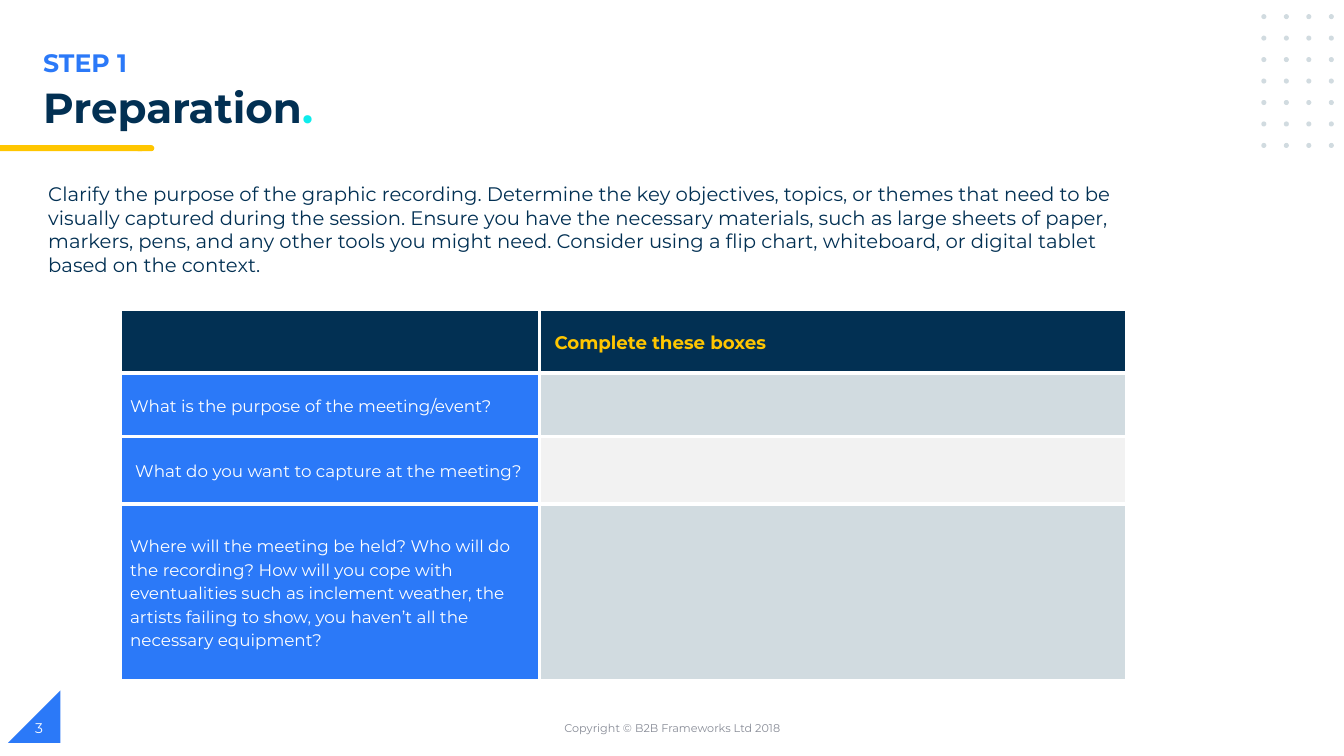
from dataclasses import dataclass

from lxml import etree
from pptx import Presentation
from pptx import util as u
from pptx.dml.color import RGBColor
from pptx.enum import shapes, text
from pptx.oxml import ns


@dataclass(frozen=True)
class Theme:
    font: str = "Montserrat"
    navy: str = "023053"
    blue: str = "2B79F8"
    yellow: str = "FFC600"
    cyan: str = "0EECEC"
    mist: str = "D1DBE0"
    pale: str = "F2F2F2"
    gray: str = "888C97"
    white: str = "FFFFFF"
    title: int = 30
    step: int = 18
    body: int = 14
    header: int = 13
    question: int = 12
    page: int = 10
    footer: int = 8


theme = Theme()
presentation = Presentation()
presentation.slide_width = u.Inches(13.33)
presentation.slide_height = u.Inches(7.5)
slide = presentation.slides.add_slide(presentation.slide_layouts[6])


def add_plain_shape(kind, left, top, width, height, color):
    shape = slide.shapes.add_shape(
        kind, u.Inches(left), u.Inches(top), u.Inches(width), u.Inches(height))
    shape.shadow.inherit = False
    shape.fill.solid()
    shape.fill.fore_color.rgb = RGBColor.from_string(color)
    shape.line.fill.background()
    return shape


def add_run(paragraph, words, size, color, bold=False):
    run = paragraph.add_run()
    run.text = words
    run.font.name = theme.font
    run.font.size = u.Pt(size)
    run.font.bold = bold
    run.font.color.rgb = RGBColor.from_string(color)


# Corner triangle and title underline
corner = add_plain_shape(shapes.MSO_SHAPE.RIGHT_TRIANGLE, 0.08, 6.85, 0.52, 0.52, theme.blue)
corner.element.spPr.find(ns.qn("a:xfrm")).set("flipH", "1")
add_plain_shape(shapes.MSO_SHAPE.FLOWCHART_TERMINATOR, 1.34, 1.44, 0.19, 0.06, theme.yellow)
add_plain_shape(shapes.MSO_SHAPE.RECTANGLE, 0, 1.44, 1.41, 0.06, theme.yellow)

# Dot grid
for row in range(7):
    for column in range(4):
        add_plain_shape(shapes.MSO_SHAPE.OVAL, 12.51 + column * 0.223,
                        0.14 + row * 0.213, 0.05, 0.05, theme.mist)

# Text boxes: position, anchor, alignment, line spacing, runs
top, middle = text.MSO_ANCHOR.TOP, text.MSO_ANCHOR.MIDDLE
left, center = text.PP_ALIGN.LEFT, text.PP_ALIGN.CENTER
introduction = (
    "Clarify the purpose of the graphic recording. Determine the key objectives, "
    "topics, or themes that need to be visually captured during the session. Ensure "
    "you have the necessary materials, such as large sheets of paper, markers, pens, "
    "and any other tools you might need. Consider using a flip chart, whiteboard, or "
    "digital tablet based on the context.")
text_boxes = [
    ((0.33, 0.42, 6.69, 0.4), top, left, 1.0, [("STEP 1", theme.step, theme.blue, True)]),
    ((0.33, 0.82, 7.76, 0.4), top, left, 0.9,
     [("Preparation", theme.title, theme.navy, True), (".", theme.title, theme.cyan, True)]),
    ((0.38, 1.76, 11.24, 1.04), top, left, 1.0, [(introduction, theme.body, theme.navy)]),
    ((4.42, 7.02, 4.5, 0.4), middle, center, 1.0,
     [("Copyright © B2B Frameworks Ltd 2018", theme.footer, theme.gray)]),
    ((0.25, 7.02, 3, 0.4), middle, left, 1.0, [("3", theme.page, theme.white)]),
]
for position, anchor, alignment, spacing, runs in text_boxes:
    frame = slide.shapes.add_textbox(*map(u.Inches, position)).text_frame
    frame.word_wrap = True
    frame.vertical_anchor = anchor
    paragraph = frame.paragraphs[0]
    paragraph.alignment = alignment
    paragraph.line_spacing = spacing
    for run in runs:
        add_run(paragraph, *run)

# Question table
column_widths = [4.16, 5.83]
row_heights = [0.63, 0.63, 0.67, 1.75]
table = slide.shapes.add_table(
    4, 2, u.Inches(1.19), u.Inches(3.07),
    u.Inches(sum(column_widths)), u.Inches(sum(row_heights))).table
table.first_row = False
table.horz_banding = False
for column, width in zip(table.columns, column_widths):
    column.width = u.Inches(width)
for row, height in zip(table.rows, row_heights):
    row.height = u.Inches(height)

# Each cell: words, fill, left margin
rows = [
    [("", theme.navy, 0.1), ("Complete these boxes", theme.navy, 0.15)],
    [("What is the purpose of the meeting/event?", theme.blue, 0.1), ("", theme.mist, 0.1)],
    [("What do you want to capture at the meeting?", theme.blue, 0.15), ("", theme.pale, 0.1)],
    [("Where will the meeting be held? Who will do the recording? How will you cope "
      "with eventualities such as inclement weather, the artists failing to show, "
      "you haven’t all the necessary equipment?", theme.blue, 0.1), ("", theme.mist, 0.1)],
]
for row_index, cells in enumerate(rows):
    for column_index, (words, fill, margin) in enumerate(cells):
        cell = table.cell(row_index, column_index)
        cell.vertical_anchor = middle
        cell.margin_left, cell.margin_right = u.Inches(margin), u.Inches(0.1)
        cell.margin_top = cell.margin_bottom = 0

        # White borders go ahead of the fill
        properties = cell._tc.get_or_add_tcPr()
        for side in ("lnL", "lnR", "lnT", "lnB"):
            border = etree.SubElement(properties, ns.qn(f"a:{side}"), w=str(u.Pt(3)))
            solid = etree.SubElement(border, ns.qn("a:solidFill"))
            etree.SubElement(solid, ns.qn("a:srgbClr"), val=theme.white)
        cell.fill.solid()
        cell.fill.fore_color.rgb = RGBColor.from_string(fill)

        if words:
            paragraph = cell.text_frame.paragraphs[0]
            paragraph.line_spacing = 1.15
            if row_index == 0:
                add_run(paragraph, words, theme.header, theme.yellow, True)
            else:
                add_run(paragraph, words, theme.question, theme.white)

presentation.save("out.pptx")
